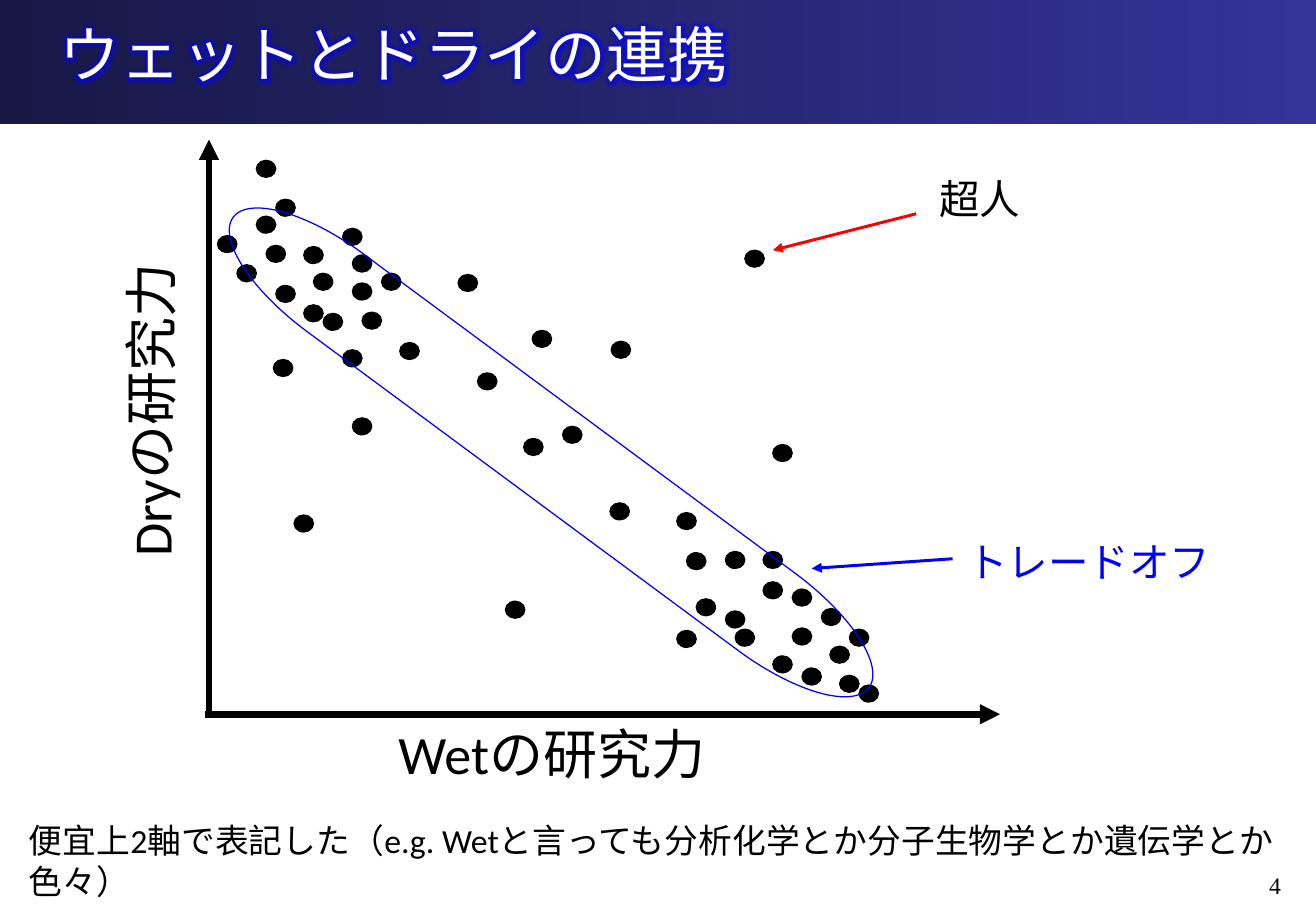
import pptx
import pptx.dml.color
import pptx.enum.dml
import pptx.enum.shapes
import pptx.enum.text
import pptx.oxml
import pptx.oxml.ns
import pptx.util

Inches = pptx.util.Inches
Pt = pptx.util.Pt
RGBColor = pptx.dml.color.RGBColor
SHAPE = pptx.enum.shapes.MSO_SHAPE
ALIGN = pptx.enum.text.PP_ALIGN
ANCHOR = pptx.enum.text.MSO_ANCHOR

BLACK = RGBColor(0x00, 0x00, 0x00)
WHITE = RGBColor(0xFF, 0xFF, 0xFF)
RED = RGBColor(0xFF, 0x00, 0x00)
BLUE = RGBColor(0x00, 0x00, 0xFF)
BAND_DARK = RGBColor(0x18, 0x18, 0x47)
BAND_LIGHT = RGBColor(0x33, 0x33, 0x99)

NAMESPACE = pptx.oxml.ns.nsdecls("a")
DOT_WIDTH, DOT_HEIGHT = 0.16, 0.14

# Upper-left corners of the dots, relative to the plot box
DRY_DOTS = [
    (1.11, 0.32), (1.27, 0.64), (1.11, 0.78), (0.79, 0.94), (0.95, 1.18),
    (1.19, 1.02), (1.5, 1.03), (1.82, 0.88), (1.9, 1.1), (1.58, 1.25),
    (1.9, 1.33), (2.14, 1.25), (1.27, 1.35), (1.5, 1.51), (1.66, 1.58),
    (1.98, 1.57), (1.82, 1.88), (2.29, 1.82),
]
MIDDLE_DOTS = [
    (2.77, 1.26), (3.38, 1.72), (4.03, 1.81), (2.93, 2.07), (3.31, 2.61),
    (3.63, 2.51), (4.02, 3.14), (1.25, 1.96), (1.9, 2.44), (1.42, 3.24),
    (3.16, 3.95), (5.36, 2.66),
]
WET_DOTS = [
    (4.57, 3.22), (4.65, 3.55), (4.97, 3.54), (5.28, 3.54), (5.28, 3.79),
    (5.52, 3.85), (5.76, 4.01), (5.99, 4.18), (4.73, 3.93), (4.97, 4.03),
    (5.05, 4.18), (4.57, 4.19), (5.52, 4.17), (5.83, 4.32), (5.36, 4.4),
    (5.6, 4.5), (5.91, 4.56), (6.07, 4.64),
]
SUPERHUMAN_DOT = (5.13, 1.06)


def set_attributes(target, values):
    for name, value in values.items():
        setattr(target, name, value)


def write_text(shape, text, size, color, font="Calibri", **paragraph_format):
    shape.text_frame.word_wrap = True
    paragraph = shape.text_frame.paragraphs[0]
    set_attributes(paragraph, paragraph_format)
    run = paragraph.add_run()
    run.text = text
    set_attributes(run.font, {"name": font, "size": Pt(size)})
    run.font.color.rgb = color
    return run


def add_label(slide, box, text, size, color=BLACK, **text_format):
    label = slide.shapes.add_textbox(*map(Inches, box))
    write_text(label, text, size, color, **text_format)
    return label


def add_outlined(slide, kind, box, color):
    shape = slide.shapes.add_shape(kind, *map(Inches, box))
    shape.shadow.inherit = False
    shape.line.color.rgb = color
    shape.line.width = Pt(0.75)
    return shape


def add_arrow(slide, start, end, color, width):
    arrow = slide.shapes.add_connector(
        pptx.enum.shapes.MSO_CONNECTOR.STRAIGHT, *map(Inches, (*start, *end)))
    arrow.line.color.rgb = color
    arrow.line.width = Pt(width)
    arrow.line._get_or_add_ln().append(
        pptx.oxml.parse_xml(f'<a:tailEnd {NAMESPACE} type="triangle"/>'))
    arrow._element.spPr.append(pptx.oxml.parse_xml(f"<a:effectLst {NAMESPACE}/>"))


def add_title_band(slide, left, top, width, height):
    # Gradient band
    band = slide.shapes.add_shape(
        SHAPE.RECTANGLE, *map(Inches, (left, top, width, height)))
    band.shadow.inherit = False
    band.line.fill.background()
    band.fill.gradient()
    band.fill.gradient_angle = 0
    for stop, color in zip(band.fill.gradient_stops, (BAND_DARK, BAND_LIGHT)):
        stop.color.rgb = color

    # Title in front of the band, with a blue glow
    title = slide.shapes.title
    slide.shapes._spTree.append(title._element)
    set_attributes(title, {
        "left": Inches(left + 0.39), "top": Inches(top + 0.13),
        "width": Inches(width - 0.14), "height": Inches(height)})
    set_attributes(title.text_frame, {
        "auto_size": pptx.enum.text.MSO_AUTO_SIZE.NONE,
        "vertical_anchor": ANCHOR.MIDDLE})
    run = write_text(title, "ウェットとドライの連携", 36, WHITE, "Karla",
                     alignment=ALIGN.LEFT, line_spacing=Pt(14))
    glow = pptx.oxml.parse_xml(
        f'<a:effectLst {NAMESPACE}><a:glow rad="101600"><a:srgbClr val="{BLUE}">'
        '<a:alpha val="60000"/></a:srgbClr></a:glow></a:effectLst>')
    run.font._element.find(pptx.oxml.ns.qn("a:solidFill")).addnext(glow)


def add_plot(slide, left, top):
    def place(x, y, *size):
        return (left + x, top + y, *size)

    # Axes
    add_arrow(slide, place(0.69, 4.88), place(7.23, 4.88), BLACK, 4)
    add_arrow(slide, place(0.72, 4.88), place(0.72, 0.15), BLACK, 4)
    add_label(slide, place(2.18, 4.88, 3.55, 0.64), "Wetの研究力", 32)
    dry_label = add_label(slide, place(-1.24, 1.88, 2.96, 0.64), "Dryの研究力", 32)
    dry_label.rotation = 270

    # Callouts
    add_label(slide, place(6.86, 3.37, 3.55, 0.5), "トレードオフ", 24, BLUE)
    add_arrow(slide, place(6.84, 3.6), place(5.68, 3.68), BLUE, 1.75)
    superhuman = add_label(slide, place(6.63, 0.38, 1.61, 0.5), "超人", 24)
    superhuman.fill.solid()
    superhuman.fill.fore_color.rgb = WHITE
    add_arrow(slide, place(6.54, 0.76), place(5.36, 1.06), RED, 1.75)

    # Researchers
    for x, y in DRY_DOTS + MIDDLE_DOTS + WET_DOTS + [SUPERHUMAN_DOT]:
        dot = add_outlined(
            slide, SHAPE.OVAL, place(x, y, DOT_WIDTH, DOT_HEIGHT), BLACK)
        dot.fill.solid()
        dot.fill.fore_color.rgb = BLACK

    # Trade-off outline
    trade_off = add_outlined(
        slide, SHAPE.FLOWCHART_TERMINATOR, place(0.28, 2.33, 6.51, 0.79), BLUE)
    trade_off.fill.background()
    trade_off.rotation = 36.5


def add_footer(slide, left, top):
    add_label(
        slide, (left, top, 10.94, 0.44),
        "便宜上2軸で表記した（e.g. Wetと言っても分析化学とか分子生物学とか遺伝学とか色々）", 20)
    add_label(slide, (left + 7.97, top + 0.42, 2.53, 0.52), "4", 14,
              font="Times New Roman", alignment=ALIGN.RIGHT)


def main():
    presentation = pptx.Presentation()
    set_attributes(presentation, {
        "slide_width": Inches(10.83), "slide_height": Inches(7.5)})
    slide = presentation.slides.add_slide(presentation.slide_layouts[5])
    add_title_band(slide, 0, 0, 10.83, 1.02)
    add_plot(slide, 1, 1)
    add_footer(slide, 0.14, 6.7)
    presentation.save("out.pptx")


if __name__ == "__main__":
    main()
